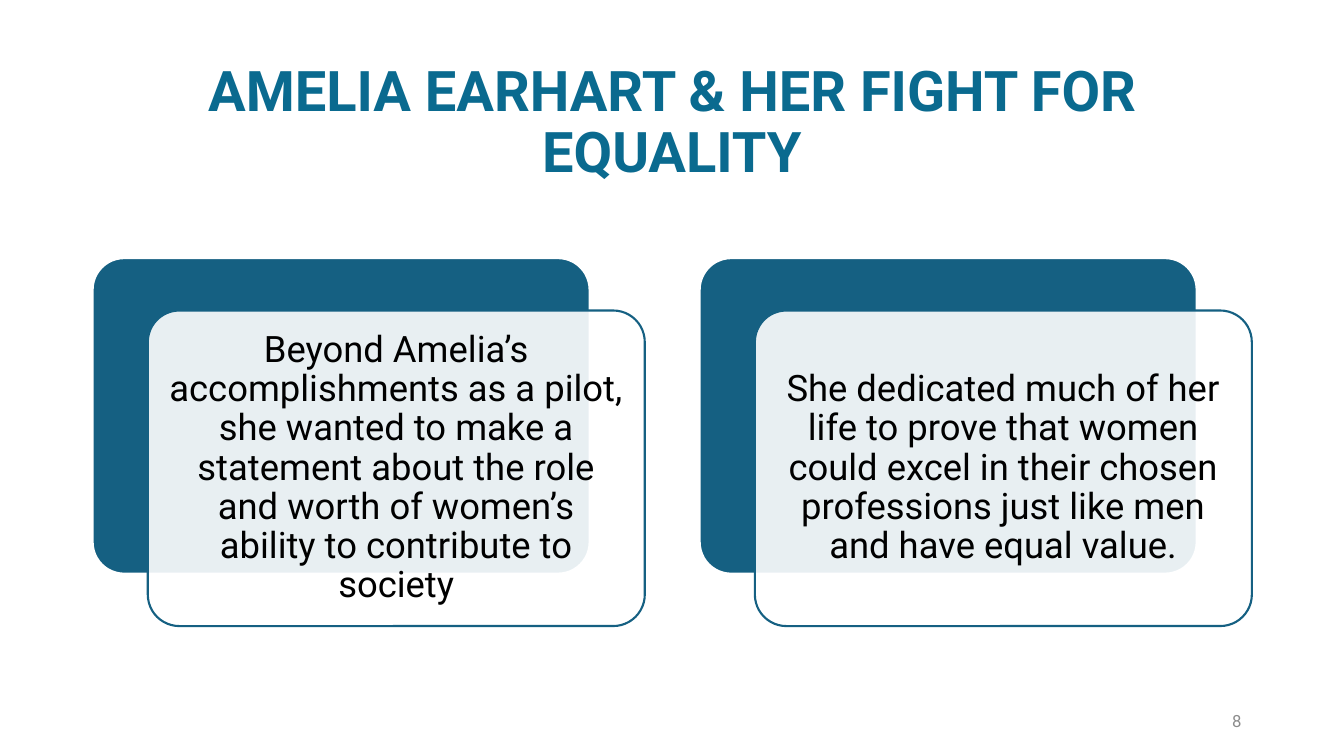
from lxml import etree
from pptx import Presentation
from pptx.dml.color import RGBColor
from pptx.enum.shapes import MSO_SHAPE
from pptx.enum.text import MSO_ANCHOR, PP_ALIGN
from pptx.oxml.ns import qn
from pptx.util import Pt

ROUNDED = MSO_SHAPE.ROUNDED_RECTANGLE
MIDDLE = MSO_ANCHOR.MIDDLE
CENTER = PP_ALIGN.CENTER
RIGHT = PP_ALIGN.RIGHT

COLORS = {
    "title": "0A6A8F",
    "panel": "156082",
    "white": "FFFFFF",
    "body": "000000",
    "number": "8C8C8C",
}


class SlideBuilder:
    font = "Roboto"
    corner = 0.1
    outline = 1.5

    def __init__(self, slide):
        self.slide = slide

    def color(self, name):
        return RGBColor.from_string(COLORS[name])

    def text(self, words, left, top, width, height, size, color,
             bold=False, align=CENTER, spacing=0.9, inset=(7.2, 3.6)):
        box = self.slide.shapes.add_textbox(Pt(left), Pt(top), Pt(width), Pt(height))
        frame = box.text_frame
        frame.word_wrap = True
        frame.vertical_anchor = MIDDLE
        frame.margin_left = frame.margin_right = Pt(inset[0])
        frame.margin_top = frame.margin_bottom = Pt(inset[1])
        frame.text = words
        paragraph = frame.paragraphs[0]
        paragraph.alignment = align
        paragraph.line_spacing = spacing
        font = paragraph.runs[0].font
        font.name = self.font
        font.size = Pt(size)
        font.bold = bold
        font.color.rgb = self.color(color)

    def panel(self, left, top, width, height, fill, line, opacity=100):
        panel = self.slide.shapes.add_shape(
            ROUNDED, Pt(left), Pt(top), Pt(width), Pt(height))
        panel.adjustments[0] = self.corner
        panel.shadow.inherit = False
        panel.fill.solid()
        panel.fill.fore_color.rgb = self.color(fill)
        panel.line.color.rgb = self.color(line)
        panel.line.width = Pt(self.outline)
        if opacity < 100:
            tint = panel.fill._xPr.find(qn("a:solidFill"))[0]
            etree.SubElement(tint, qn("a:alpha")).set("val", str(opacity * 1000))

    def card(self, words, left, top, width, height):
        shift_x, shift_y, pad = 39.4, 37.4, 6.6
        front_left, front_top = left + shift_x, top + shift_y
        self.panel(left, top, width, height, "panel", "white")
        self.panel(front_left, front_top, width, height, "white", "panel", 90)
        self.text(words, front_left + pad, front_top + pad,
                  width - 2 * pad, height - 2 * pad, 26, "body", inset=(7.8, 7.8))


def main():
    deck = Presentation()
    deck.slide_width, deck.slide_height = Pt(960), Pt(540)
    builder = SlideBuilder(deck.slides.add_slide(deck.slide_layouts[6]))

    builder.text("AMELIA EARHART & HER FIGHT FOR EQUALITY",
                 66, 44, 828, 89, 40, "title", bold=True)
    builder.text("8", 678, 500.5, 216, 28.75, 12, "number", align=RIGHT, spacing=1)

    statements = [
        "Beyond Amelia’s accomplishments as a pilot, she wanted to make a "
        "statement about the role and worth of women’s ability to contribute to society",
        "She dedicated much of her life to prove that women could excel in "
        "their chosen professions just like men and have equal value.",
    ]
    for column, statement in enumerate(statements):
        builder.card(statement, 66.2 + column * 433.6, 184.4, 355, 225.4)

    deck.save("out.pptx")


if __name__ == "__main__":
    main()
